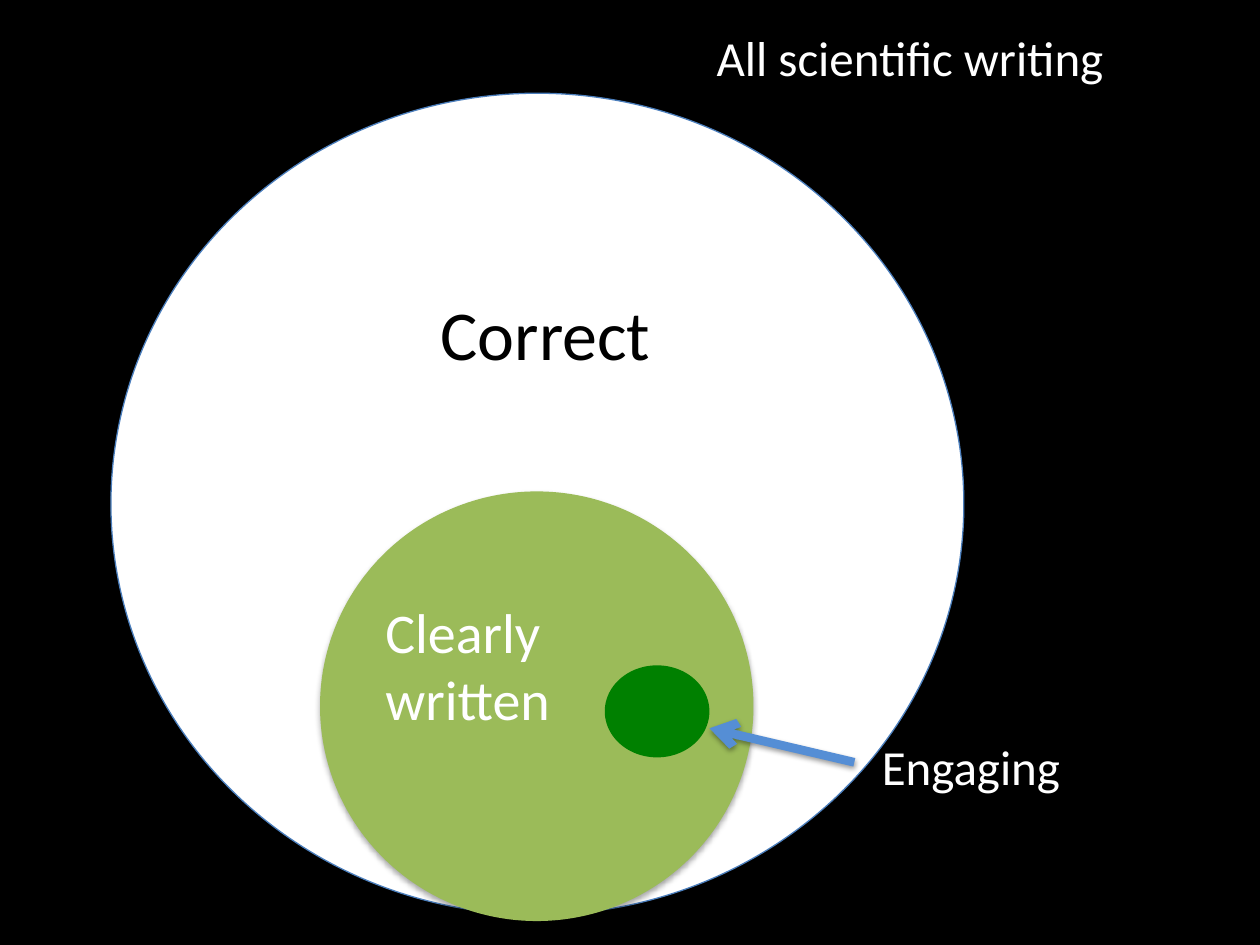
from lxml import etree
from pptx import Presentation
from pptx.dml.color import RGBColor
from pptx.enum.shapes import MSO_CONNECTOR, MSO_SHAPE
from pptx.enum.text import MSO_AUTO_SIZE, PP_ALIGN
from pptx.oxml.ns import qn
from pptx.util import Pt

ELLIPSE = MSO_SHAPE.OVAL
STRAIGHT = MSO_CONNECTOR.STRAIGHT
FIT_TEXT = MSO_AUTO_SIZE.SHAPE_TO_FIT_TEXT
LEFT, CENTER = PP_ALIGN.LEFT, PP_ALIGN.CENTER

FONT = "Calibri"
BLACK, WHITE = "000000", "FFFFFF"

# Nested sets: left, top, width, height, fill, outline, shadow (opacity %, distance)
SETS = [
    (63.4, 53.3, 487.4, 469.4, WHITE, "4B7EBC", (35, 1.8)),
    (182.9, 280.8, 247.7, 245.5, "9BBB59", None, (35, 1.8)),
    (345.6, 380.2, 59.8, 52.6, "008000", None, None),
]

# Labels: text, left, top, width, height, size, colour, alignment
LABELS = [
    ("Correct", 231.8, 162.7, 159.8, 55.4, 40, BLACK, CENTER),
    ("All scientific writing ", 326.9, 12.2, 392.4, 41, 28, WHITE, CENTER),
    ("Clearly written", 213.1, 337.7, 151.2, 85, 32, WHITE, LEFT),
    ("Engaging", 496.8, 417.6, 128.2, 41, 28, WHITE, LEFT),
]

# Arrow from the "Engaging" label to the smallest set
ARROW_START, ARROW_END = (488.2, 435.6), (405.4, 416.2)
ARROW_COLOR, ARROW_WIDTH, ARROW_SHADOW = "558ED5", 5, (38, 1.6)


def color(value):
    return RGBColor.from_string(value)


def set_shadow(shape, shadow):
    """Replace the theme shadow with a soft downward one, or with none."""
    properties = shape._element.spPr
    effects = properties.find(qn("a:effectLst"))
    if effects is None:
        effects = etree.SubElement(properties, qn("a:effectLst"))
    if shadow:
        opacity, distance = shadow
        outer = etree.SubElement(
            effects, qn("a:outerShdw"), blurRad=str(Pt(3.1)),
            dist=str(Pt(distance)), dir="5400000", rotWithShape="0")
        black = etree.SubElement(outer, qn("a:srgbClr"), val=BLACK)
        etree.SubElement(black, qn("a:alpha"), val=str(opacity * 1000))


def add_set(slide, left, top, width, height, fill, outline, shadow):
    shape = slide.shapes.add_shape(ELLIPSE, Pt(left), Pt(top), Pt(width), Pt(height))
    shape.fill.solid()
    shape.fill.fore_color.rgb = color(fill)
    if outline:
        shape.line.color.rgb = color(outline)
        shape.line.width = Pt(0.75)
    else:
        shape.line.fill.background()
    shape.shadow.inherit = False
    set_shadow(shape, shadow)


def add_label(slide, text, left, top, width, height, size, text_color, alignment):
    box = slide.shapes.add_textbox(Pt(left), Pt(top), Pt(width), Pt(height))
    frame = box.text_frame
    frame.word_wrap = True
    frame.auto_size = FIT_TEXT
    paragraph = frame.paragraphs[0]
    paragraph.alignment = alignment
    run = paragraph.add_run()
    run.text = text
    run.font.name = FONT
    run.font.size = Pt(size)
    run.font.color.rgb = color(text_color)


def add_arrow(slide):
    points = [Pt(value) for value in ARROW_START + ARROW_END]
    arrow = slide.shapes.add_connector(STRAIGHT, *points)
    arrow.line.color.rgb = color(ARROW_COLOR)
    arrow.line.width = Pt(ARROW_WIDTH)
    line = arrow._element.spPr.find(qn("a:ln"))
    etree.SubElement(line, qn("a:tailEnd"), type="arrow")
    set_shadow(arrow, ARROW_SHADOW)


def main():
    presentation = Presentation()
    presentation.slide_width, presentation.slide_height = Pt(720), Pt(540)
    slide = presentation.slides.add_slide(presentation.slide_layouts[6])
    slide.background.fill.solid()
    slide.background.fill.fore_color.rgb = color(BLACK)

    for nested_set in SETS:
        add_set(slide, *nested_set)
    for label in LABELS:
        add_label(slide, *label)
    add_arrow(slide)

    presentation.save("out.pptx")


if __name__ == "__main__":
    main()
